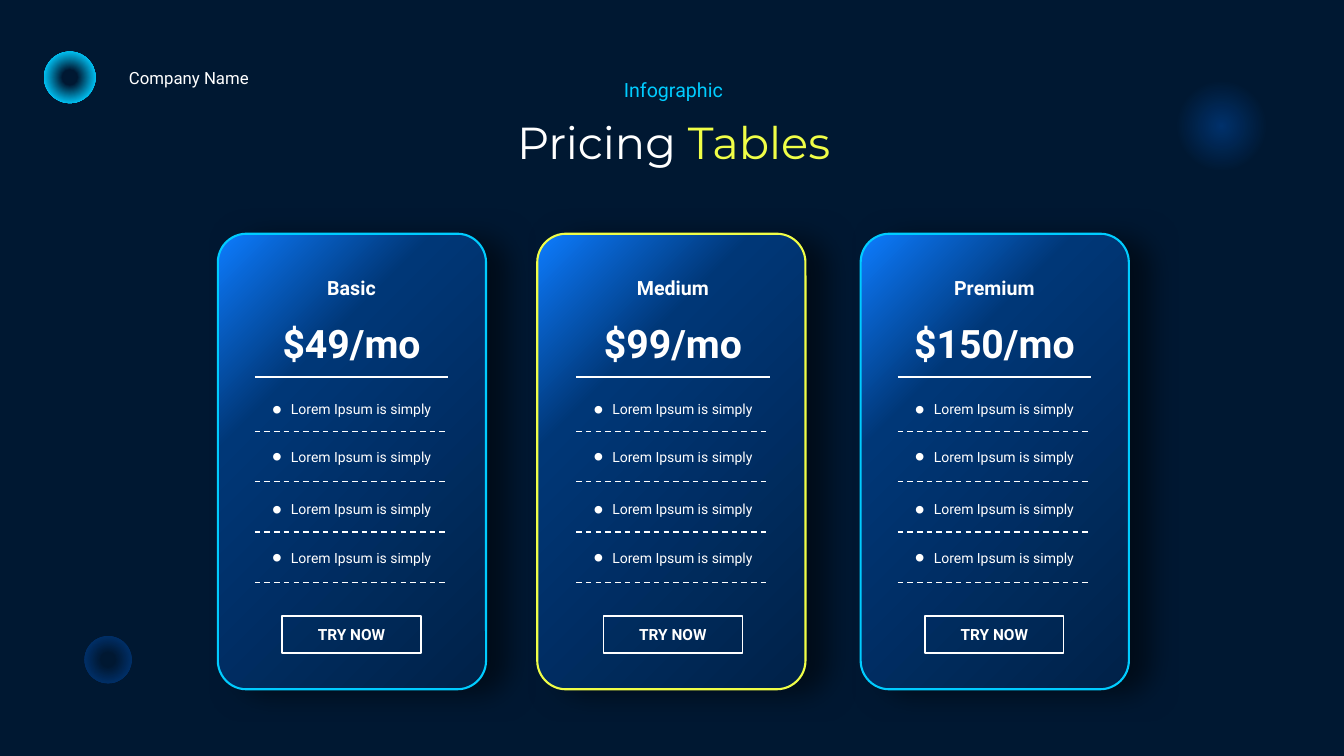
from dataclasses import dataclass

from pptx import Presentation
from pptx.dml.color import RGBColor
from pptx.enum import dml, shapes, text
from pptx.oxml import parse_xml
from pptx.oxml.ns import nsdecls, qn
from pptx.util import Cm, Pt

Stops = tuple[tuple[int, str], ...]
Box = tuple[float, float, float, float]


@dataclass(frozen=True)
class Theme:
    back: str = "001832"
    white: str = "FFFFFF"
    cyan: str = "00CCFF"
    lime: str = "F0FE47"
    navy: str = "00316B"
    panel: Stops = ((0, "002148"), (70, "003777"), (100, "0D7CFF"))
    body: str = "Roboto"
    head: str = "Montserrat"
    title: int = 32
    price: int = 28
    label: int = 14
    firm: int = 12
    button: int = 11
    item: int = 10


@dataclass(frozen=True)
class Plan:
    name: str
    price: str
    edge: str
    left: float


@dataclass(frozen=True)
class Disc:
    left: float
    top: float
    size: float
    stops: Stops


T = Theme()
PLANS = (
    Plan("Basic", "$49/mo", T.cyan, 5.49),
    Plan("Medium", "$99/mo", T.lime, 13.54),
    Plan("Premium", "$150/mo", T.cyan, 21.69),
)
DISCS = (
    Disc(1.11, 1.3, 1.3, ((1, T.back), (20, T.back), (75, T.cyan))),
    Disc(29.39, 1.78, 2.79, ((0, T.navy), (59, T.back))),
    Disc(2.13, 16.03, 1.19, ((0, T.back), (20, T.back), (75, T.navy))),
)
FIRST, STEP = 8.86, 8.1  # centre of the first column, distance between columns
ITEMS = (9.98, 11.18, 12.5, 13.72)
DASH, GAP = 10.87, 1.27
ITEM = "Lorem Ipsum is simply"


def rgb(code: str) -> RGBColor:
    return RGBColor.from_string(code)


def shade(shape, stops: Stops, kind: str) -> None:
    """Fill a shape with a gradient; kind is the XML that sets its direction."""
    marks = "".join(
        f'<a:gs pos="{pos * 1000}"><a:srgbClr val="{code}"/></a:gs>'
        for pos, code in stops
    )
    shape.fill.background()
    props = shape._element.spPr
    props.replace(props.find(qn("a:noFill")), parse_xml(
        f'<a:gradFill {nsdecls("a")} rotWithShape="1">'
        f"<a:gsLst>{marks}</a:gsLst>{kind}</a:gradFill>"
    ))


def style(run, size: int, color: str, bold: bool = False, face: str = T.body) -> None:
    run.font.name = face
    run.font.size = Pt(size)
    run.font.bold = bold
    run.font.color.rgb = rgb(color)


def add_text(slide, box: Box, words: str, size: int, color: str = T.white,
             bold: bool = False, align=text.PP_ALIGN.CENTER):
    frame = slide.shapes.add_textbox(*map(Cm, box)).text_frame
    frame.word_wrap = True
    frame.auto_size = text.MSO_AUTO_SIZE.SHAPE_TO_FIT_TEXT
    frame.text = words
    para = frame.paragraphs[0]
    para.alignment = align
    style(para.runs[0], size, color, bold)
    return para


def add_bullet(para) -> None:
    props = para._p.get_or_add_pPr()
    props.set("marL", "171450")
    props.set("indent", "-171450")
    for mark in (
        f'<a:buClr {nsdecls("a")}><a:srgbClr val="{T.white}"/></a:buClr>',
        f'<a:buSzPct {nsdecls("a")} val="200000"/>',
        f'<a:buFont {nsdecls("a")} typeface="Arial"/>',
        f'<a:buChar {nsdecls("a")} char="•"/>',
    ):
        props.append(parse_xml(mark))


def add_rule(slide, mid: float, top: float, dashed: bool = False) -> None:
    rule = slide.shapes.add_connector(
        shapes.MSO_CONNECTOR.STRAIGHT,
        Cm(mid - 2.44), Cm(top), Cm(mid + 2.44), Cm(top))
    rule.line.color.rgb = rgb(T.white)
    rule.line.width = Pt(1)
    if dashed:
        rule.line.dash_style = dml.MSO_LINE.DASH
    rule._element.spPr.append(parse_xml(f'<a:effectLst {nsdecls("a")}/>'))


def add_card(slide, plan: Plan) -> None:
    card = slide.shapes.add_shape(
        shapes.MSO_SHAPE.ROUNDED_RECTANGLE,
        Cm(plan.left), Cm(5.89), Cm(6.76), Cm(11.48))
    card.adjustments[0] = 0.107
    shade(card, T.panel, '<a:lin ang="13500000" scaled="0"/>')
    card.line.color.rgb = rgb(plan.edge)
    card.line.width = Pt(1.5)
    card.shadow.inherit = False
    card._element.spPr.find(qn("a:effectLst")).append(parse_xml(
        f'<a:outerShdw {nsdecls("a")} blurRad="{Pt(20)}" dist="{Pt(15)}" '
        'dir="600000" algn="ctr" rotWithShape="0"><a:srgbClr val="000000">'
        '<a:alpha val="50000"/></a:srgbClr></a:outerShdw>'
    ))


def add_button(slide, mid: float) -> None:
    button = slide.shapes.add_shape(
        shapes.MSO_SHAPE.RECTANGLE,
        Cm(mid - 1.75), Cm(15.52), Cm(3.5), Cm(0.94))
    button.fill.background()
    button.line.color.rgb = rgb(T.white)
    button.line.width = Pt(1)
    button.shadow.inherit = False
    frame = button.text_frame
    frame.text = "TRY NOW"
    frame.vertical_anchor = text.MSO_ANCHOR.MIDDLE
    frame.paragraphs[0].alignment = text.PP_ALIGN.CENTER
    style(frame.paragraphs[0].runs[0], T.button, T.white, True)


def add_plan(slide, plan: Plan, mid: float) -> None:
    add_card(slide, plan)
    add_text(slide, (mid - 2.1, 6.83, 4.2, 0.86), plan.name, T.label, bold=True)
    add_text(slide, (mid - 2.8, 7.91, 5.6, 1.45), plan.price, T.price, bold=True)
    add_rule(slide, mid, 9.5)
    for row, top in enumerate(ITEMS):
        add_bullet(add_text(slide, (mid - 3.19, top, 6.38, 0.69), ITEM, T.item))
        add_rule(slide, mid, DASH + row * GAP, dashed=True)
    add_button(slide, mid)


def add_disc(slide, disc: Disc) -> None:
    oval = slide.shapes.add_shape(
        shapes.MSO_SHAPE.OVAL,
        Cm(disc.left), Cm(disc.top), Cm(disc.size), Cm(disc.size))
    shade(oval, disc.stops,
          '<a:path path="circle"><a:fillToRect l="50000" t="50000" '
          'r="50000" b="50000"/></a:path>')
    oval.line.fill.background()
    oval.shadow.inherit = False


def set_title(slide) -> None:
    title = slide.shapes.title
    title.left, title.top, title.width, title.height = map(
        Cm, (9.27, 2.77, 15.42, 1.63))
    frame = title.text_frame
    frame.auto_size = text.MSO_AUTO_SIZE.NONE
    frame.vertical_anchor = text.MSO_ANCHOR.TOP
    para = frame.paragraphs[0]
    para.alignment = text.PP_ALIGN.CENTER
    for word, color in (("Pricing ", T.white), ("Tables", T.lime)):
        run = para.add_run()
        run.text = word
        style(run, T.title, color, face=T.head)


def main() -> None:
    deck = Presentation()
    deck.slide_width, deck.slide_height = Cm(33.87), Cm(19.05)
    slide = deck.slides.add_slide(deck.slide_layouts[5])
    slide.background.fill.solid()
    slide.background.fill.fore_color.rgb = rgb(T.back)
    for col, plan in enumerate(PLANS):
        add_plan(slide, plan, FIRST + col * STEP)
    for disc in DISCS:
        add_disc(slide, disc)
    add_text(slide, (3, 1.57, 4.57, 0.76), "Company Name", T.firm,
             align=text.PP_ALIGN.LEFT)
    set_title(slide)
    add_text(slide, (14.53, 1.83, 4.88, 0.86), "Infographic", T.label, T.cyan)
    deck.save("out.pptx")


if __name__ == "__main__":
    main()
